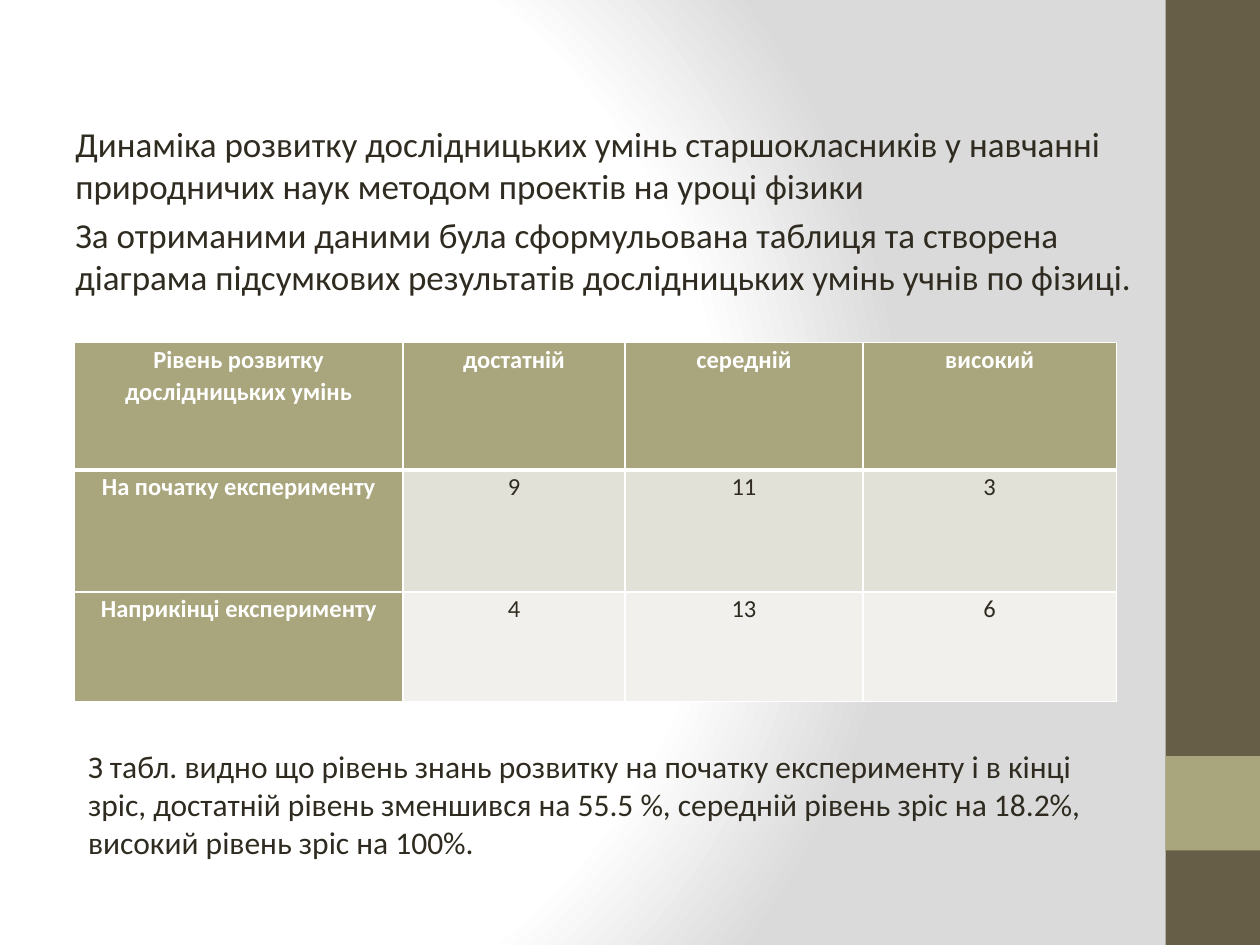
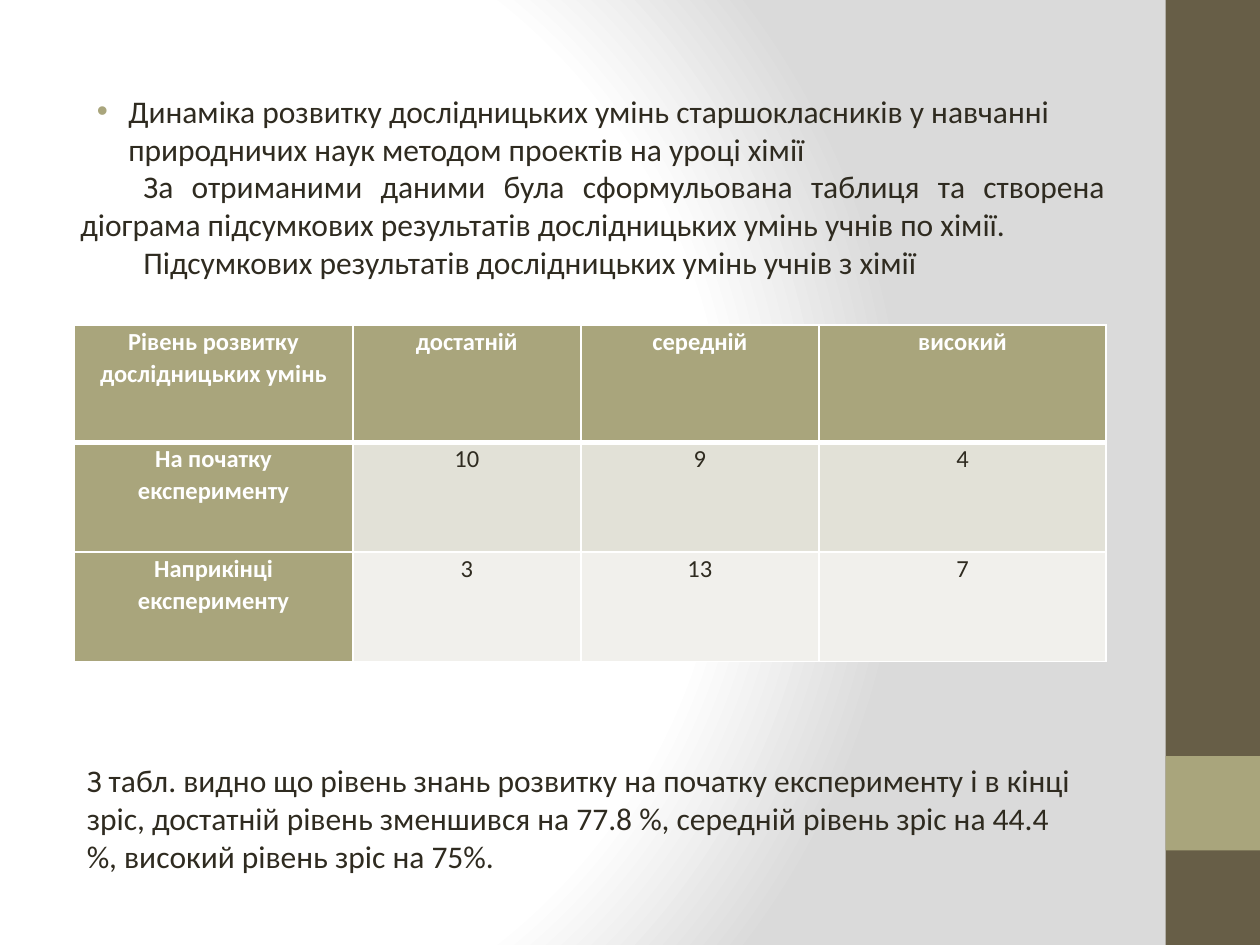
from lxml import etree
from pptx import Presentation
from pptx import oxml
from pptx import util as u
from pptx.dml.color import RGBColor
from pptx.enum import shapes, text
from pptx.oxml import ns

COLORS = {"band": "675E47", "accent": "A9A57C", "ink": "2F2B20", "white": "FFFFFF",
          "row_dark": "E2E1D7", "row_light": "F1F0EC", "edge": "DADADA"}
FONT = "Calibri"
LEVELS = ["Рівень розвитку дослідницьких умінь", "достатній", "середній", "високий"]
STAGES = ["На початку експерименту", "Наприкінці експерименту"]


def rgb(name):
    return RGBColor.from_string(COLORS[name])


def style(paragraph, size, color="ink", bold=False):
    for run in paragraph.runs:
        run.font.name, run.font.size, run.font.bold = FONT, u.Pt(size), bold
        run.font.color.rgb = rgb(color)


def add_backdrop(slide):
    """Radial gradient with the two bands at the right edge."""
    stops = "".join(f'<a:gs pos="{pos}000"><a:srgbClr val="{COLORS[name]}"/></a:gs>'
                    for pos, name in ((0, "white"), (75, "white"), (100, "edge")))
    slide.element.cSld.insert(0, oxml.parse_xml(
        f'<p:bg {ns.nsdecls("p", "a")}><p:bgPr><a:gradFill rotWithShape="1">'
        f'<a:gsLst>{stops}</a:gsLst><a:path path="circle">'
        '<a:fillToRect l="20000" t="50000" r="100000" b="50000"/></a:path>'
        '</a:gradFill><a:effectLst/></p:bgPr></p:bg>'))
    for top, height, color in ((0, 7.5, "band"), (6, 0.75, "accent")):
        band = slide.shapes.add_shape(shapes.MSO_SHAPE.RECTANGLE, u.Inches(9.25),
                                      u.Inches(top), u.Inches(0.75), u.Inches(height))
        band.shadow.inherit = False
        band.fill.solid()
        band.fill.fore_color.rgb = rgb(color)
        band.line.fill.background()


def add_text(slide, box, lines, size):
    frame = slide.shapes.add_textbox(*map(u.Inches, box)).text_frame
    frame.word_wrap = True
    frame.text = "\n".join(lines)
    for paragraph in frame.paragraphs:
        style(paragraph, size)
    return frame.paragraphs


def indent(paragraph, left, first):
    properties = paragraph._p.get_or_add_pPr()
    properties.set("marL", str(u.Inches(left)))
    properties.set("indent", str(u.Inches(first)))
    return properties


def add_bullet(paragraph):
    properties = indent(paragraph, 0.38, -0.25)
    color = etree.SubElement(properties, ns.qn("a:buClr"))
    etree.SubElement(color, ns.qn("a:srgbClr"), val=COLORS["accent"])
    etree.SubElement(properties, ns.qn("a:buFont"), typeface="Arial")
    etree.SubElement(properties, ns.qn("a:buChar"), char="•")


def add_borders(cell, top, bottom):
    widths = {"lnL": 1, "lnR": 1, "lnT": top, "lnB": bottom}
    for place, (side, width) in enumerate(widths.items()):
        cell._tc.get_or_add_tcPr().insert(place, oxml.parse_xml(
            f'<a:{side} {ns.nsdecls("a")} w="{u.Pt(width)}"><a:solidFill>'
            f'<a:srgbClr val="{COLORS["white"]}"/></a:solidFill></a:{side}>'))


def add_results(slide, left, top, widths, heights, counts):
    """Table of pupils per level, one row for each stage of the experiment."""
    rows = [LEVELS] + [[stage, *values] for stage, values in zip(STAGES, counts)]
    table = slide.shapes.add_table(len(rows), len(LEVELS), u.Inches(left), u.Inches(top),
                                   u.Inches(sum(widths)), u.Inches(sum(heights))).table
    for column, width in zip(table.columns, widths):
        column.width = u.Inches(width)
    for r, (values, height) in enumerate(zip(rows, heights)):
        table.rows[r].height = u.Inches(height)
        for c, value in enumerate(values):
            heading = r == 0 or c == 0
            cell = table.cell(r, c)
            cell.text = str(value)
            cell.margin_left = cell.margin_right = u.Inches(0.07)
            cell.margin_top = cell.margin_bottom = 0
            cell.fill.solid()
            cell.fill.fore_color.rgb = rgb(
                "accent" if heading else ("row_dark", "row_light")[r - 1])
            add_borders(cell, 3 if r == 1 else 1, 3 if r == 0 else 1)
            paragraph = cell.text_frame.paragraphs[0]
            paragraph.alignment = text.PP_ALIGN.CENTER
            paragraph.line_spacing = 1.07
            style(paragraph, 14, "white" if heading else "ink", heading)


def add_conclusion(slide, box, lower, middle, high):
    add_text(slide, box, [
        "З табл. видно що рівень знань розвитку на початку експерименту і в кінці зріс, "
        f"достатній рівень зменшився на {lower}, середній рівень зріс на {middle}, "
        f"високий рівень зріс на {high}."], 18)


def physics_slide(slide):
    add_backdrop(slide)
    intro = add_text(slide, (0.5, 0.92, 9, 1.6), [
        "Динаміка розвитку дослідницьких умінь старшокласників у навчанні "
        "природничих наук методом проектів на уроці фізики",
        "За отриманими даними була сформульована таблиця та створена діаграма "
        "підсумкових результатів дослідницьких умінь учнів по фізиці."], 20)
    intro[1].space_before = u.Pt(4)
    add_results(slide, 0.59, 2.72, (2.61, 1.76, 1.89, 2.01), (1.01, 0.97, 0.87),
                ((9, 11, 3), (4, 13, 6)))
    add_conclusion(slide, (0.6, 5.88, 8.19, 1.01), "55.5 %", "18.2%", "100%")


def chemistry_slide(slide):
    add_backdrop(slide)
    topic, *details = add_text(slide, (0.54, 0.68, 8.33, 1.8), [
        "Динаміка розвитку дослідницьких умінь старшокласників у навчанні "
        "природничих наук методом проектів на уроці хімії",
        "За отриманими даними була сформульована таблиця та створена діограма "
        "підсумкових результатів дослідницьких умінь учнів по хімії.",
        "Підсумкових результатів дослідницьких умінь учнів з хімії"], 18)
    add_bullet(topic)
    for detail in details:
        detail.alignment = text.PP_ALIGN.JUSTIFY
        indent(detail, 0, 0.5)
    add_results(slide, 0.59, 2.58, (2.21, 1.81, 1.89, 2.28), (0.93, 0.87, 0.87),
                ((10, 9, 4), (3, 13, 7)))
    add_conclusion(slide, (0.59, 5.99, 8.11, 1.01), "77.8 %", "44.4 %", "75%")


def main():
    deck = Presentation()
    deck.slide_width, deck.slide_height = u.Inches(10), u.Inches(7.5)
    for build in (physics_slide, chemistry_slide):
        build(deck.slides.add_slide(deck.slide_layouts[6]))
    deck.save("out.pptx")


if __name__ == "__main__":
    main()
